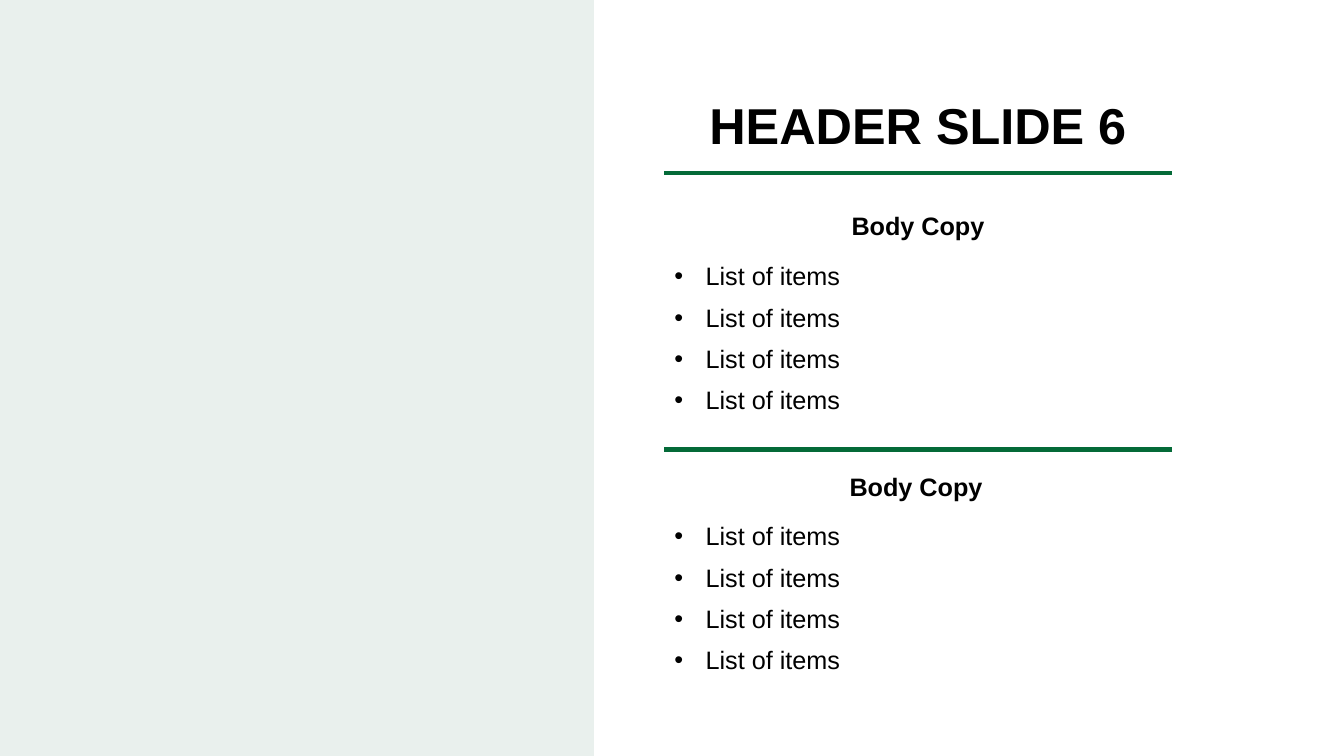
from lxml import etree
from pptx import Presentation
from pptx.dml.color import RGBColor
from pptx.enum.shapes import MSO_CONNECTOR as Connector, MSO_SHAPE as Shape
from pptx.enum.text import MSO_ANCHOR as Anchor, PP_ALIGN as Align
from pptx.oxml.ns import qn
from pptx.util import Pt

PX = 9144  # EMU per px, 100 px to the inch
SLIDE_W, SLIDE_H = 1333, 750
LEFT, COLUMN_W = 659, 503
BULLET_INDENT = 31
COLORS = {"panel": "93B8A7", "rule": "046A38", "text": "000000"}
ITEMS = ["List of items"] * 4


def px(*lengths):
    return [length * PX for length in lengths]


def color(name):
    return RGBColor.from_string(COLORS[name])


def add_panel(slide, width, opacity):
    """Tint the left side of the slide; opacity is in percent."""
    panel = slide.shapes.add_shape(Shape.RECTANGLE, *px(0, 0, width, SLIDE_H))
    panel.shadow.inherit = False
    panel.fill.solid()
    panel.fill.fore_color.rgb = color("panel")
    panel.line.fill.background()
    tint = panel.fill._xPr.find(qn("a:solidFill"))[0]
    etree.SubElement(tint, qn("a:alpha"), val=str(opacity * 1000))


def add_rule(slide, y):
    rule = slide.shapes.add_connector(
        Connector.STRAIGHT, *px(LEFT, y, LEFT + COLUMN_W, y))
    rule.line.color.rgb = color("rule")
    rule.line.width = Pt(3)
    etree.SubElement(rule._element.spPr, qn("a:effectLst"))


def add_bullet(paragraph):
    properties = paragraph._p.get_or_add_pPr()
    indent = BULLET_INDENT * PX
    properties.set("marL", str(indent))
    properties.set("indent", str(-indent))
    etree.SubElement(properties, qn("a:buFont"), typeface="Arial")
    etree.SubElement(properties, qn("a:buChar"), char="•")


def style_text(paragraph, size, bold):
    paragraph.line_spacing = 0.9
    for run in paragraph.runs:
        run.font.name = "Arial"
        run.font.size = Pt(size)
        run.font.bold = bold
        run.font.color.rgb = color("text")


def add_frame(slide, top, width, height, anchor):
    frame = slide.shapes.add_textbox(*px(LEFT, top, width, height)).text_frame
    frame.word_wrap = True
    frame.vertical_anchor = anchor
    return frame


def add_heading(slide, text, top, height, size, width=COLUMN_W):
    frame = add_frame(slide, top, width, height, Anchor.MIDDLE)
    frame.text = text
    heading = frame.paragraphs[0]
    heading.alignment = Align.CENTER
    style_text(heading, size, bold=True)


def add_list(slide, items, top):
    frame = add_frame(slide, top, COLUMN_W, 173, Anchor.TOP)
    frame.text = "\n".join(items)
    for index, item in enumerate(frame.paragraphs):
        add_bullet(item)
        style_text(item, 18, bold=False)
        if index:
            item.space_before = Pt(10)


def add_section(slide, top, heading_width):
    add_heading(slide, "Body Copy", top, 44, 18, heading_width)
    add_list(slide, ITEMS, top + 53)


def main():
    deck = Presentation()
    deck.slide_width, deck.slide_height = px(SLIDE_W, SLIDE_H)
    slide = deck.slides.add_slide(deck.slide_layouts[6])
    add_panel(slide, 589, opacity=20)
    add_heading(slide, "HEADER SLIDE 6", 83, 89, 36)
    for top, heading_width in ((204, COLUMN_W), (462, 499)):
        add_section(slide, top, heading_width)
    for y in (172, 446):
        add_rule(slide, y)
    deck.save("out.pptx")


if __name__ == "__main__":
    main()
